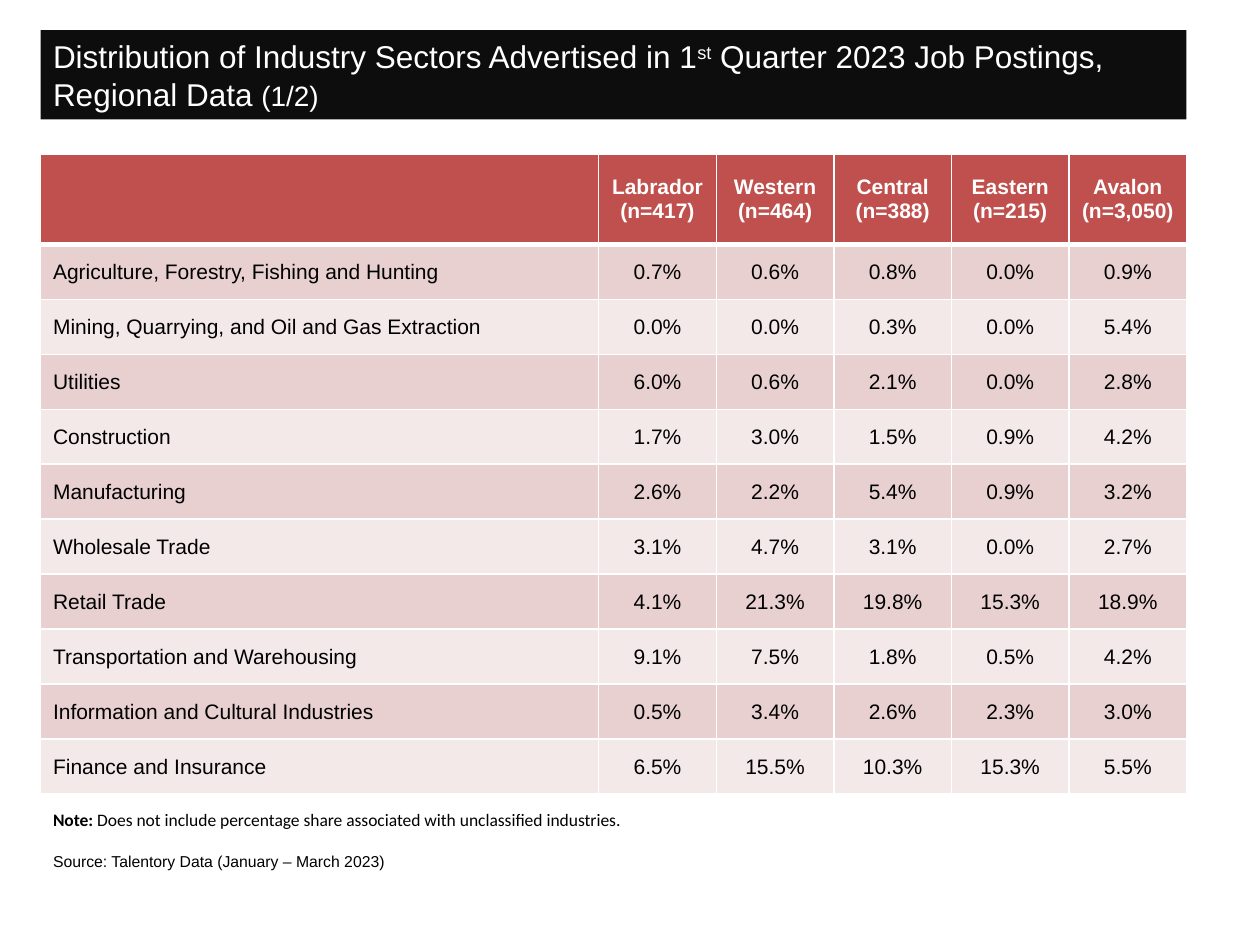
from lxml.etree import SubElement
from pptx import Presentation
from pptx.dml.color import RGBColor
from pptx.enum.shapes import MSO_SHAPE as SHAPE
from pptx.enum.text import MSO_ANCHOR as ANCHOR, PP_ALIGN as ALIGN
from pptx.oxml.ns import qn
from pptx.util import Cm, Pt

COLORS = {
    "banner": "0D0D0D",
    "header": "C0504D",
    "band_dark": "E8D0D0",
    "band_light": "F4E9E9",
    "white": "FFFFFF",
    "black": "000000",
}

REGIONS = [("Labrador", "417"), ("Western", "464"), ("Central", "388"),
           ("Eastern", "215"), ("Avalon", "3,050")]

SECTORS = [
    ("Agriculture, Forestry, Fishing and Hunting", 0.7, 0.6, 0.8, 0.0, 0.9),
    ("Mining, Quarrying, and Oil and Gas Extraction", 0.0, 0.0, 0.3, 0.0, 5.4),
    ("Utilities", 6.0, 0.6, 2.1, 0.0, 2.8),
    ("Construction", 1.7, 3.0, 1.5, 0.9, 4.2),
    ("Manufacturing", 2.6, 2.2, 5.4, 0.9, 3.2),
    ("Wholesale Trade", 3.1, 4.7, 3.1, 0.0, 2.7),
    ("Retail Trade", 4.1, 21.3, 19.8, 15.3, 18.9),
    ("Transportation and Warehousing", 9.1, 7.5, 1.8, 0.5, 4.2),
    ("Information and Cultural Industries", 0.5, 3.4, 2.6, 2.3, 3.0),
    ("Finance and Insurance", 6.5, 15.5, 10.3, 15.3, 5.5),
]


def rgb(name):
    return RGBColor.from_string(COLORS[name])


def add_run(p, text, size=12, color="black", bold=False, font="Arial", baseline=None):
    r = p.add_run()
    r.text = text
    r.font.name, r.font.size, r.font.bold = font, Pt(size), bold
    r.font.color.rgb = rgb(color)
    if baseline:
        r.font._element.set("baseline", str(baseline))


def set_borders(cell, **widths):
    """Give the cell white borders; widths are points keyed by side L, R, T, B."""
    tc_pr = cell._tc.get_or_add_tcPr()
    for side in "LRTB":
        ln = SubElement(tc_pr, qn(f"a:ln{side}"), w=str(Pt(widths.get(side, 1))))
        fill = SubElement(ln, qn("a:solidFill"))
        SubElement(fill, qn("a:srgbClr"), val=COLORS["white"])


def style_cell(cell, fill, **widths):
    set_borders(cell, **widths)
    cell.fill.solid()
    cell.fill.fore_color.rgb = rgb(fill)
    cell.vertical_anchor = ANCHOR.MIDDLE


def add_banner(slide, left, top, width, height):
    sp = slide.shapes.add_shape(SHAPE.RECTANGLE, left, top, width, height)
    sp.shadow.inherit = False
    sp.fill.solid()
    sp.fill.fore_color.rgb = rgb("banner")
    sp.line.fill.background()
    tf = sp.text_frame
    tf.word_wrap = True
    first, second = tf.paragraphs[0], tf.add_paragraph()
    first.alignment = second.alignment = ALIGN.LEFT
    title = {"size": 18, "color": "white"}
    add_run(first, "Distribution of Industry Sectors Advertised in 1", **title)
    add_run(first, "st", baseline=30000, **title)
    add_run(first, " Quarter 2023 Job Postings,", **title)
    add_run(second, "Regional Data ", **title)
    add_run(second, "(1/2)", size=16, color="white")


def add_sector_table(slide, left, top, width, height):
    label_width, header_height = Cm(11.25), Cm(1.83)
    table = slide.shapes.add_table(len(SECTORS) + 1, len(REGIONS) + 1,
                                   left, top, width, height).table
    table.horz_banding = False
    for i, col in enumerate(table.columns):
        col.width = (width - label_width) // len(REGIONS) if i else label_width
    for i, row in enumerate(table.rows):
        row.height = (height - header_height) // len(SECTORS) if i else header_height

    style_cell(table.cell(0, 0), "header", B=3)
    for c, (region, count) in enumerate(REGIONS, 1):
        cell = table.cell(0, c)
        style_cell(cell, "header", B=3)
        tf = cell.text_frame
        for p, text in ((tf.paragraphs[0], region), (tf.add_paragraph(), f"(n={count})")):
            p.alignment = ALIGN.CENTER
            add_run(p, text, color="white", bold=True)

    for r, (sector, *shares) in enumerate(SECTORS, 1):
        for c, text in enumerate([sector] + [f"{share:.1f}%" for share in shares]):
            cell = table.cell(r, c)
            style_cell(cell, "band_dark" if r % 2 else "band_light", T=3 if r == 1 else 1)
            cell.margin_left = Cm(0.02) if c else Cm(0.25)
            cell.margin_right = cell.margin_top = Cm(0.02)
            cell.margin_bottom = 0
            p = cell.text_frame.paragraphs[0]
            p.alignment = ALIGN.CENTER if c else ALIGN.LEFT
            add_run(p, text)


def add_footnote(slide, left, top, width, height, runs, wrap=True, **fmt):
    """Add one line of text from (text, bold) runs."""
    tf = slide.shapes.add_textbox(left, top, width, height).text_frame
    tf.word_wrap = wrap
    for text, bold in runs:
        add_run(tf.paragraphs[0], text, bold=bold, **fmt)


def main():
    prs = Presentation()
    prs.slide_width, prs.slide_height = Cm(25.4), Cm(19.05)
    slide = prs.slides.add_slide(prs.slide_layouts[6])
    left, width = Cm(0.82), Cm(23.1)
    add_banner(slide, left, Cm(0.61), width, Cm(1.8))
    add_sector_table(slide, left, Cm(3.1), width, Cm(12.9))
    add_footnote(slide, left, Cm(17.04), Cm(7.24), Cm(0.64),
                 [("Source: Talentory Data (January – March 2023)", False)],
                 wrap=False, size=9)
    add_footnote(slide, left, Cm(16.18), Cm(13.77), Cm(0.68),
                 [("Note: ", True),
                  ("Does not include percentage share associated with "
                   "unclassified industries.", False)],
                 size=10, font="Calibri")
    prs.save("out.pptx")


if __name__ == "__main__":
    main()
